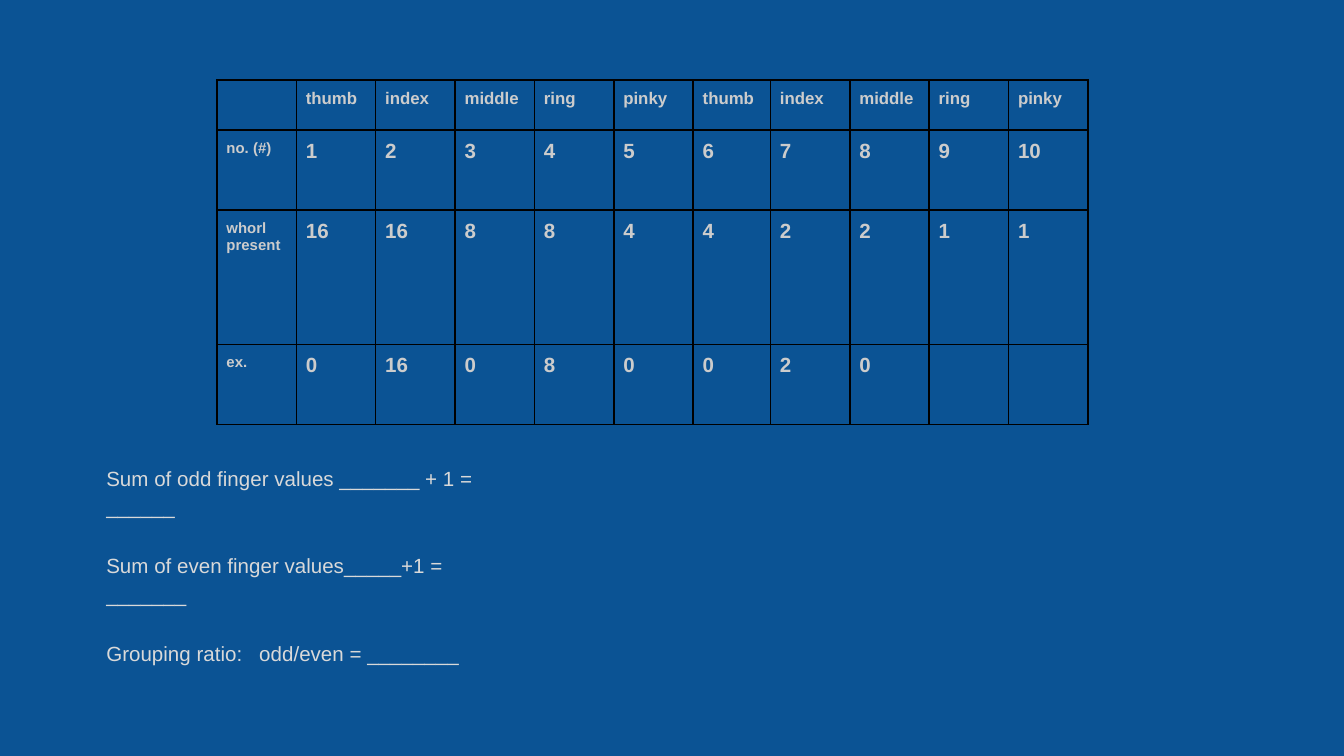
from dataclasses import dataclass

from lxml.etree import SubElement
from pptx import Presentation
from pptx.dml.color import RGBColor
from pptx.enum.text import MSO_ANCHOR
from pptx.oxml import parse_xml
from pptx.oxml.ns import nsdecls, qn
from pptx.util import Cm, Pt


@dataclass(frozen=True)
class Theme:
    font: str = "Arial"
    background: str = "0B5394"
    table_text: str = "CCCCCC"
    body_text: str = "D9D9D9"
    border: str = "000000"
    header_size: int = 9
    label_size: int = 8
    body_size: int = 11


THEME = Theme()

FINGERS = ["thumb", "index", "middle", "ring", "pinky"]
ROWS = [
    [""] + FINGERS * 2,
    ["no. (#)"] + [str(n) for n in range(1, 11)],
    ["whorl\npresent", "16", "16", "8", "8", "4", "4", "2", "2", "1", "1"],
    ["ex.", "0", "16", "0", "8", "0", "0", "2", "0", "", ""],
]
ROW_HEIGHTS = [0.95, 1.51, 2.54, 1.51]
COL_WIDTHS = [1.5] * 6 + [1.46] + [1.5] * 4

FORMULAS = [
    "Sum of odd finger values _______ + 1 = ______",
    "Sum of even finger values_____+1 = _______",
    "Grouping ratio:\todd/even = ________",
]


def style_run(r, size, color, bold=False):
    r.font.name = THEME.font
    r.font.size = Pt(size)
    r.font.bold = bold
    r.font.color.rgb = RGBColor.from_string(color)


def add_borders(cell):
    """Draw a thin line on all four sides of a cell."""
    tc_pr = cell._tc.get_or_add_tcPr()
    for i, side in enumerate(["lnL", "lnR", "lnT", "lnB"]):
        tc_pr.insert(i, parse_xml(
            f'<a:{side} {nsdecls("a")} w="{Pt(1)}"><a:solidFill>'
            f'<a:srgbClr val="{THEME.border}"/></a:solidFill></a:{side}>'))


def format_cell(cell, text, size):
    cell.text = text
    cell.fill.background()
    cell.margin_left = cell.margin_right = Cm(0.18)
    cell.margin_top = cell.margin_bottom = Cm(0.18)
    for p in cell.text_frame.paragraphs:
        for r in p.runs:
            style_run(r, size, THEME.table_text, bold=True)
        if not p.runs:  # keeps an empty cell from stretching its row
            SubElement(p._p, qn("a:endParaRPr"), sz=str(size * 100))
    add_borders(cell)


def add_finger_table(s, left, top):
    """Finger numbers, whorl values and an example."""
    table = s.shapes.add_table(
        len(ROWS), len(COL_WIDTHS), Cm(left), Cm(top),
        Cm(sum(COL_WIDTHS)), Cm(sum(ROW_HEIGHTS))).table
    table.first_row = table.horz_banding = False
    for column, width in zip(table.columns, COL_WIDTHS):
        column.width = Cm(width)
    for i, (row, height) in enumerate(zip(ROWS, ROW_HEIGHTS)):
        table.rows[i].height = Cm(height)
        for j, text in enumerate(row):
            if i == 0:
                size = THEME.header_size
            else:
                size = THEME.label_size if j == 0 else THEME.body_size
            format_cell(table.cell(i, j), text, size)


def add_formulas(s, left, top, width, height):
    """Fill-in sums and the grouping ratio."""
    tf = s.shapes.add_textbox(Cm(left), Cm(top), Cm(width), Cm(height)).text_frame
    tf.word_wrap = True
    tf.vertical_anchor = MSO_ANCHOR.TOP
    tf.margin_left = tf.margin_right = tf.margin_bottom = Cm(0.25)
    tf.margin_top = Cm(1.73)
    tf.text = "\n".join(FORMULAS)
    for i, p in enumerate(tf.paragraphs):
        p.line_spacing = 1.15
        p.space_before = Pt(16.5 if i else 0)
        for r in p.runs:
            style_run(r, THEME.body_size, THEME.body_text)
    # Tab stop between the ratio's label and its formula
    tabs = SubElement(p._p.get_or_add_pPr(), qn("a:tabLst"))
    SubElement(tabs, qn("a:tab"), pos=str(Cm(2.89)), algn="l")


def main():
    prs = Presentation()
    prs.slide_width, prs.slide_height = Cm(25.4), Cm(14.29)
    s = prs.slides.add_slide(prs.slide_layouts[6])
    s.background.fill.solid()
    s.background.fill.fore_color.rgb = RGBColor.from_string(THEME.background)
    add_finger_table(s, 4.1, 1.51)
    add_formulas(s, 1.76, 7.01, 8.33, 6.1)
    prs.save("out.pptx")


if __name__ == "__main__":
    main()
